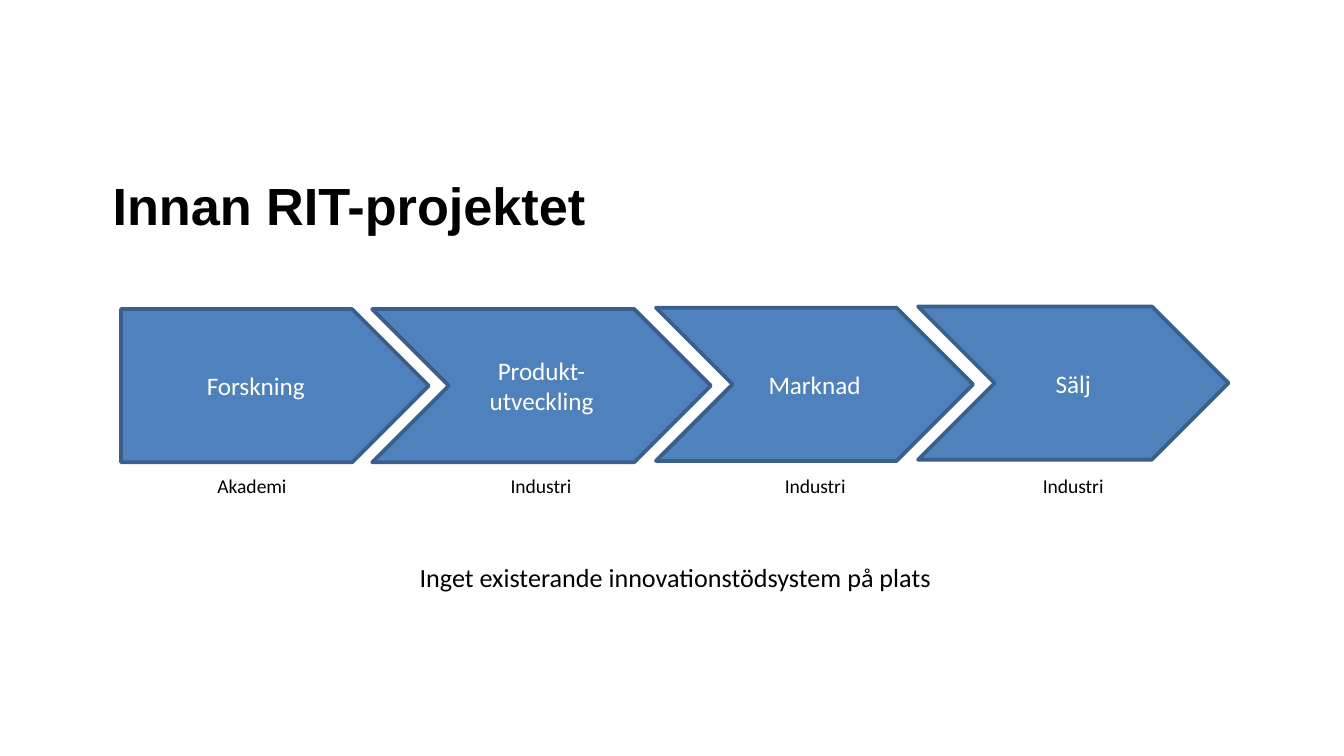
from pptx import Presentation
from pptx.dml.color import RGBColor
from pptx.enum.shapes import MSO_SHAPE
from pptx.enum.text import MSO_ANCHOR, PP_ALIGN
from pptx.util import Pt

COLORS = {"arrow": "4F81BD", "outline": "3A5F8C", "light": "FFFFFF", "dark": "000000"}

TITLE = "Innan RIT-projektet"
SUMMARY = "Inget existerande innovationstödsystem på plats"

# Stage, shape, left, top, width; then actor, label left, label width
STAGES = [
    ("Forskning", MSO_SHAPE.PENTAGON, 64.8, 165.6, 164.9, "Akademi", 97.9, 74.2),
    ("Produkt-utveckling", MSO_SHAPE.CHEVRON, 199.4, 165.6, 181.4, "Industri", 255.6, 68.4),
    ("Marknad", MSO_SHAPE.CHEVRON, 351.4, 164.9, 169.9, "Industri", 402.5, 68.4),
    ("Sälj", MSO_SHAPE.CHEVRON, 491.8, 164.2, 166.3, "Industri", 540.7, 68.4),
]
ARROW_HEIGHT = 82.1
LABEL_TOP, LABEL_HEIGHT = 250.6, 20.2


def color(name):
    return RGBColor.from_string(COLORS[name])


def write(shape, text, size, color_name, font="Calibri", bold=False,
          align=PP_ALIGN.CENTER, anchor=MSO_ANCHOR.MIDDLE):
    frame = shape.text_frame
    frame.word_wrap = True
    frame.vertical_anchor = anchor
    paragraph = frame.paragraphs[0]
    paragraph.alignment = align
    run = paragraph.add_run()
    run.text = text
    run.font.name = font
    run.font.size = Pt(size)
    run.font.bold = bold
    run.font.color.rgb = color(color_name)


def add_text(slide, box, text, size, **style):
    textbox = slide.shapes.add_textbox(*map(Pt, box))
    write(textbox, text, size, "dark", **style)


def add_arrow(slide, kind, box, text):
    arrow = slide.shapes.add_shape(kind, *map(Pt, box))
    arrow.shadow.inherit = False
    arrow.fill.solid()
    arrow.fill.fore_color.rgb = color("arrow")
    arrow.line.color.rgb = color("outline")
    arrow.line.width = Pt(2)
    write(arrow, text, 13.5, "light")


presentation = Presentation()
presentation.slide_width, presentation.slide_height = Pt(720), Pt(405)
slide = presentation.slides.add_slide(presentation.slide_layouts[6])

# Title
add_text(slide, (53.3, 66.2, 612, 87.1), TITLE, 28,
         font="Arial", bold=True, align=PP_ALIGN.LEFT)

# Process arrows with the responsible actor below each
for stage, kind, left, top, width, actor, label_left, label_width in STAGES:
    add_arrow(slide, kind, (left, top, width, ARROW_HEIGHT), stage)
    add_text(slide, (label_left, LABEL_TOP, label_width, LABEL_HEIGHT), actor, 10.5,
             anchor=MSO_ANCHOR.TOP)

# Summary line
add_text(slide, (64.8, 297.4, 594, 24.5), SUMMARY, 14, anchor=MSO_ANCHOR.TOP)

presentation.save("out.pptx")
